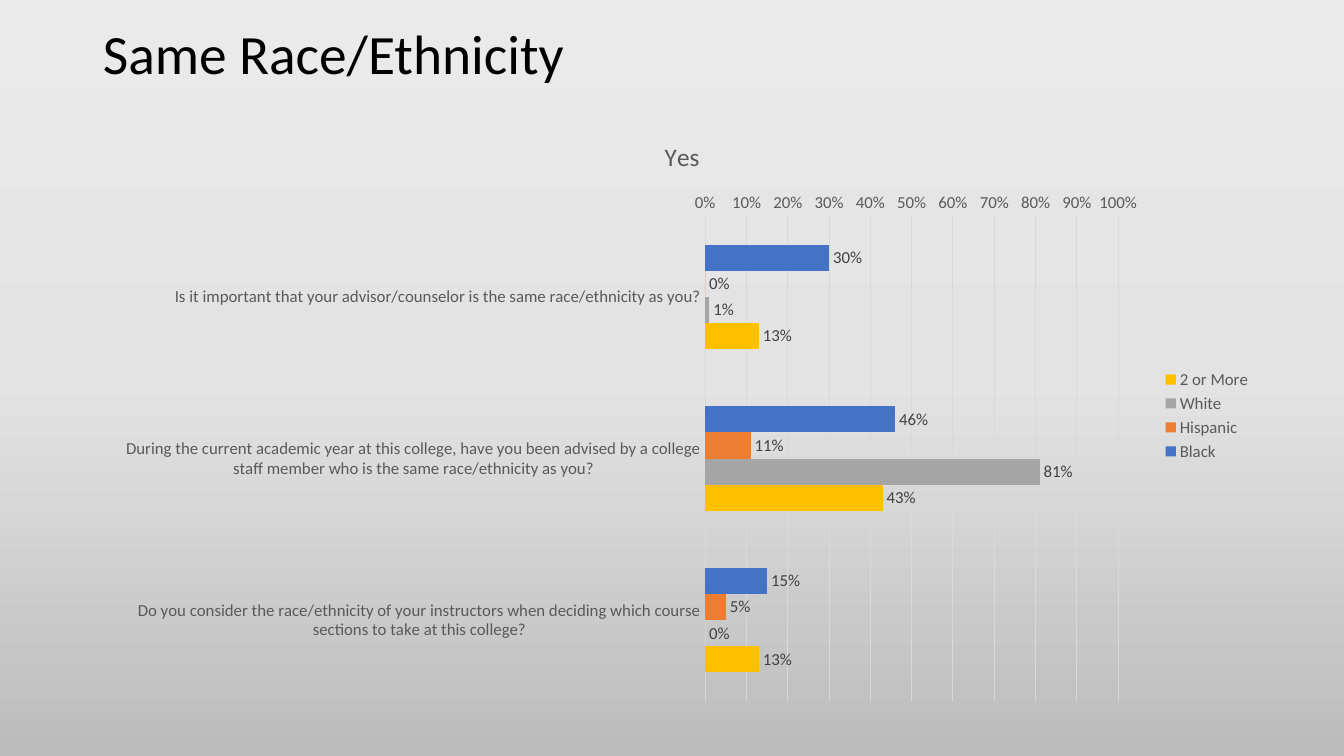
from copy import deepcopy

from lxml.etree import SubElement
from pptx import Presentation
from pptx.chart.data import CategoryChartData
from pptx.dml.color import RGBColor
from pptx.enum.chart import XL_CHART_TYPE, XL_LABEL_POSITION, XL_LEGEND_POSITION, XL_TICK_MARK
from pptx.enum.text import MSO_ANCHOR, MSO_AUTO_SIZE, PP_ALIGN
from pptx.oxml.ns import qn
from pptx.util import Inches, Pt

QUESTIONS = [
    "Is it important that your advisor/counselor is the same race/ethnicity as you?",
    "During the current academic year at this college, have you been advised by a "
    "college staff member who is the same race/ethnicity as you?",
    "Do you consider the race/ethnicity of your instructors when deciding which "
    "course sections to take at this college?",
]
GROUPS = [
    ("Black", (0.3, 0.46, 0.15), "4472C4"),
    ("Hispanic", (0, 0.11, 0.05), "ED7D31"),
    ("White", (0.01, 0.81, 0), "A5A5A5"),
    ("2 or More", (0.13, 0.43, 0.13), "FFC000"),
]


def rgb(value):
    return RGBColor.from_string(value)


class Deck:
    font = "Calibri"
    ink, muted, label, rule = "000000", "595959", "404040", "D9D9D9"

    def __init__(self, width, height):
        self.prs = Presentation()
        self.prs.slide_width, self.prs.slide_height = Inches(width), Inches(height)
        self.s = self.prs.slides.add_slide(self.prs.slide_layouts[5])

    def box(self, x, y, w, h):
        width, height = self.prs.slide_width, self.prs.slide_height
        return int(x * width), int(y * height), int(w * width), int(h * height)

    def style(self, font, size, color):
        font.name, font.size, font.bold = self.font, Pt(size), False
        font.color.rgb = rgb(color)

    def line(self, fmt):
        fmt.line.color.rgb = rgb(self.rule)
        fmt.line.width = Pt(0.75)

    def background(self, colors):
        fill = self.s.background.fill
        fill.gradient()
        fill.gradient_angle = 270
        stops = next(self.s.element.iter(qn("a:gsLst")))
        stops.insert(1, deepcopy(stops[0]))
        for i, (stop, color) in enumerate(zip(fill.gradient_stops, colors)):
            stop.position = i / (len(colors) - 1)
            stop.color.rgb = rgb(color)

    def title(self, text, *share):
        sp = self.s.shapes.title
        sp.left, sp.top, sp.width, sp.height = self.box(*share)
        tf = sp.text_frame
        tf.text = text
        tf.word_wrap, tf.auto_size = True, MSO_AUTO_SIZE.NONE
        tf.vertical_anchor = MSO_ANCHOR.MIDDLE
        p = tf.paragraphs[0]
        p.alignment, p.line_spacing = PP_ALIGN.LEFT, 0.9
        self.style(p.runs[0].font, 39.6, self.ink)

    def bar_chart(self, title, categories, groups, plot, *share):
        data = CategoryChartData(number_format="0%")
        data.categories = categories
        for name, values, _ in groups:
            data.add_series(name, values)
        chart = self.s.shapes.add_chart(
            XL_CHART_TYPE.BAR_CLUSTERED, *self.box(*share), data).chart
        self.style(chart.font, 10, self.ink)
        tf = chart.chart_title.text_frame
        tf.text = title
        self.style(tf.paragraphs[0].runs[0].font, 18, self.muted)
        self.axes(chart)
        self.legend(chart)
        self.series(chart.plots[0], groups)
        self.place_plot(chart, plot)

    def axes(self, chart):
        cat, val = chart.category_axis, chart.value_axis
        for axis in (cat, val):
            axis.major_tick_mark = axis.minor_tick_mark = XL_TICK_MARK.NONE
            self.style(axis.tick_labels.font, 12, self.muted)
        cat.reverse_order = True
        self.line(cat.format)
        val.minimum_scale, val.maximum_scale, val.major_unit = 0, 1, 0.1
        val.tick_labels.number_format = "0%"
        val.tick_labels.number_format_is_linked = False
        val.format.line.fill.background()
        self.line(val.major_gridlines.format)

    def legend(self, chart):
        chart.has_legend = True
        chart.legend.position = XL_LEGEND_POSITION.RIGHT
        chart.legend.include_in_layout = False
        self.style(chart.legend.font, 12, self.muted)

    def series(self, plot, groups):
        plot.gap_width, plot.overlap, plot.vary_by_categories = 219, 0, False
        for series, (_, _, color) in zip(plot.series, groups):
            series.invert_if_negative = False
            series.format.fill.solid()
            series.format.fill.fore_color.rgb = rgb(color)
            labels = series.data_labels
            labels.show_value = True
            labels.number_format, labels.number_format_is_linked = "0%", False
            labels.position = XL_LABEL_POSITION.OUTSIDE_END
            self.style(labels.font, 12, self.label)

    def place_plot(self, chart, share):
        area = next(chart.element.iter(qn("c:plotArea")))
        for old in area.findall(qn("c:layout")):
            area.remove(old)
        layout = SubElement(area, qn("c:layout"))
        area.insert(0, layout)
        manual = SubElement(layout, qn("c:manualLayout"))
        settings = [("layoutTarget", "inner"), ("xMode", "edge"), ("yMode", "edge")]
        for tag, value in settings + list(zip("xywh", share)):
            SubElement(manual, qn(f"c:{tag}")).set("val", str(value))


def main():
    deck = Deck(13.33, 7.5)
    deck.background(["EBEAEA", "E4E3E3", "BDBCBC"])
    deck.title("Same Race/Ethnicity", 0.069, 0.03, 0.863, 0.089)
    deck.bar_chart("Yes", QUESTIONS, GROUPS, (0.52, 0.166, 0.356, 0.813),
                   0.076, 0.155, 0.863, 0.789)
    deck.prs.save("out.pptx")


if __name__ == "__main__":
    main()
